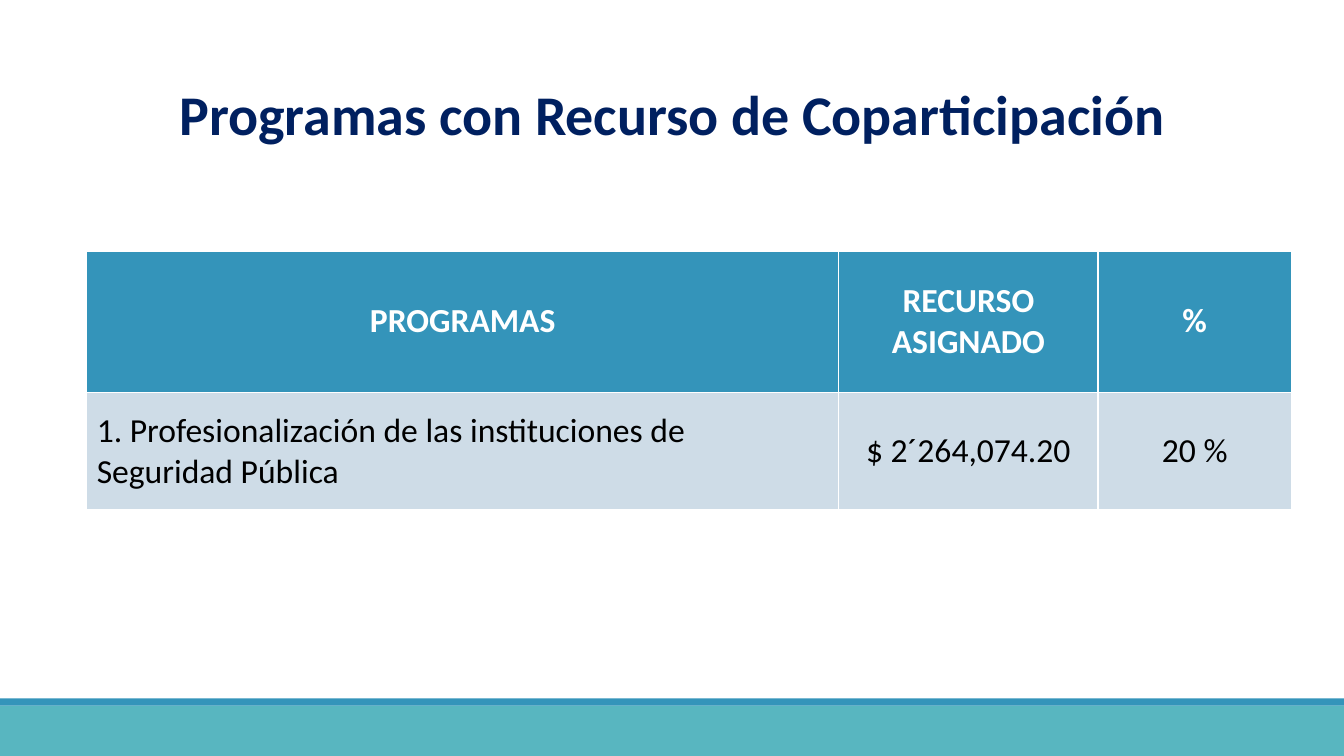
from pptx import Presentation
from pptx.dml.color import RGBColor
from pptx.enum.shapes import MSO_SHAPE
from pptx.enum.text import MSO_ANCHOR, MSO_AUTO_SIZE, PP_ALIGN
from pptx.util import Inches, Pt

TITLE = "Programas con Recurso de Coparticipación"
ROWS = [
    ("PROGRAMAS", "RECURSO ASIGNADO", "%"),
    ("1. Profesionalización de las instituciones de Seguridad Pública",
     "$ 2´264,074.20", "20 %"),
]
COL_WIDTHS = (7.46, 2.57, 1.92)
ROW_HEIGHTS = (1.4, 1.17)
TABLE_LEFT, TABLE_TOP = 0.86, 2.49
SLIDE_W, SLIDE_H = 13.33, 7.5
BAND_H, STRIPE_H = 0.5, 0.07

THEME = {
    "font": "Calibri",
    "blue": RGBColor.from_string("3494BA"),
    "teal": RGBColor.from_string("58B6C0"),
    "pale": RGBColor.from_string("CEDCE7"),
}
TITLE_FONT = {"name": THEME["font"], "size": Pt(40), "bold": True,
              "color": RGBColor.from_string("002060")}
HEAD_FONT = {"name": THEME["font"], "size": Pt(24), "bold": True,
             "color": RGBColor.from_string("FFFFFF")}
BODY_FONT = {**HEAD_FONT, "bold": False, "color": RGBColor.from_string("000000")}


def write(tf, text, font, align):
    p = tf.paragraphs[0]
    p.alignment = align
    r = p.add_run()
    r.text = text
    for name, value in font.items():
        if name == "color":
            r.font.color.rgb = value
        else:
            setattr(r.font, name, value)


def add_band(slide, top, height, color):
    sp = slide.shapes.add_shape(MSO_SHAPE.RECTANGLE, 0, Inches(top),
                                Inches(SLIDE_W), Inches(height))
    sp.shadow.inherit = False
    sp.fill.solid()
    sp.fill.fore_color.rgb = color
    sp.line.fill.background()


def add_title(slide):
    sp = slide.shapes.title
    sp.left, sp.top = 0, Inches(0.74)
    sp.width, sp.height = Inches(SLIDE_W), Inches(0.77)
    tf = sp.text_frame
    tf.word_wrap = True
    tf.auto_size = MSO_AUTO_SIZE.NONE
    tf.vertical_anchor = MSO_ANCHOR.MIDDLE
    write(tf, TITLE, TITLE_FONT, PP_ALIGN.CENTER)


def add_programs_table(slide):
    table = slide.shapes.add_table(
        len(ROWS), len(COL_WIDTHS), Inches(TABLE_LEFT), Inches(TABLE_TOP),
        Inches(sum(COL_WIDTHS)), Inches(sum(ROW_HEIGHTS))).table
    for col, width in zip(table.columns, COL_WIDTHS):
        col.width = Inches(width)
    for i, (values, height) in enumerate(zip(ROWS, ROW_HEIGHTS)):
        table.rows[i].height = Inches(height)
        is_head = i == 0
        for j, text in enumerate(values):
            cell = table.cell(i, j)
            cell.vertical_anchor = MSO_ANCHOR.MIDDLE
            cell.fill.solid()
            cell.fill.fore_color.rgb = THEME["blue" if is_head else "pale"]
            centered = is_head or j > 0
            write(cell.text_frame, text, HEAD_FONT if is_head else BODY_FONT,
                  PP_ALIGN.CENTER if centered else PP_ALIGN.LEFT)


def main():
    prs = Presentation()
    prs.slide_width, prs.slide_height = Inches(SLIDE_W), Inches(SLIDE_H)
    slide = prs.slides.add_slide(prs.slide_layouts[5])
    band_top = SLIDE_H - BAND_H
    add_band(slide, band_top, BAND_H, THEME["teal"])
    add_band(slide, band_top - STRIPE_H, STRIPE_H, THEME["blue"])
    add_title(slide)
    add_programs_table(slide)
    prs.save("out.pptx")


if __name__ == "__main__":
    main()
